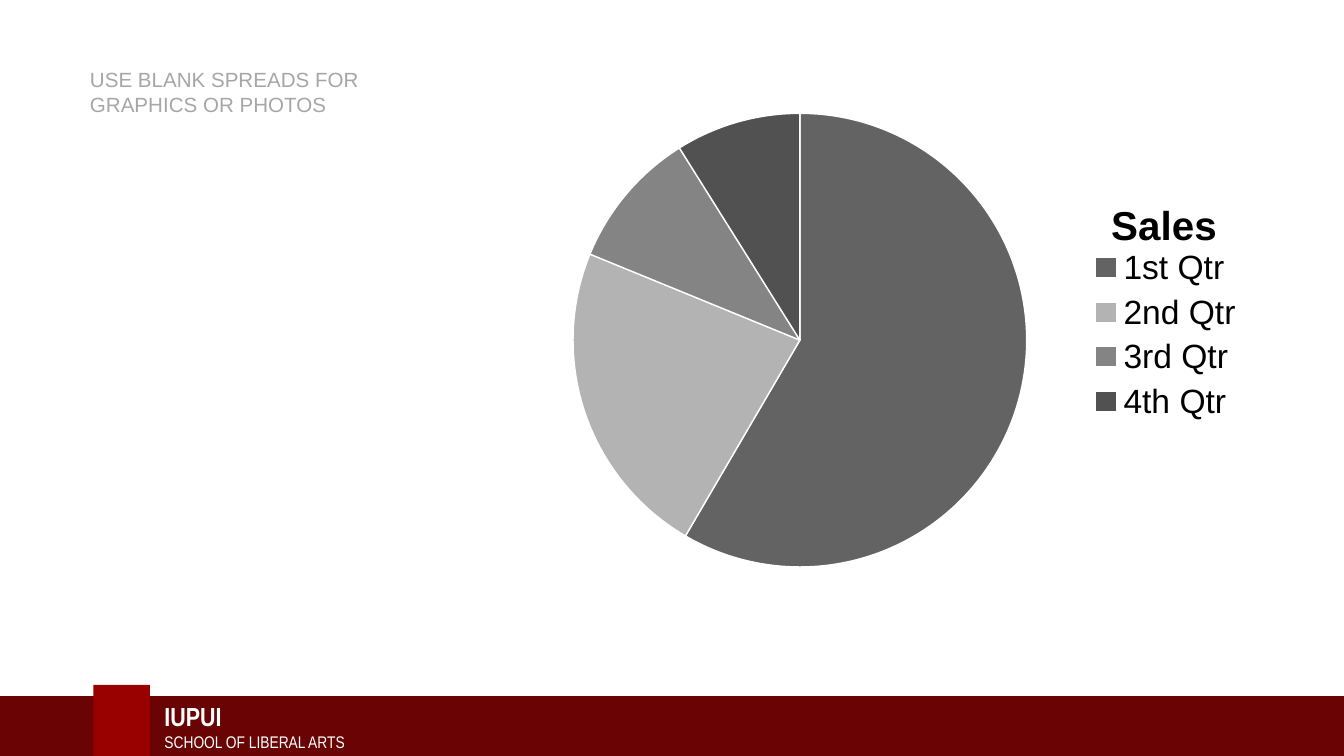
"""Build a slide with a quarterly sales pie chart above a school footer."""
from lxml import etree
from pptx import Presentation
from pptx.chart.data import CategoryChartData
from pptx.dml.color import RGBColor
from pptx.enum.chart import XL_CHART_TYPE, XL_LEGEND_POSITION
from pptx.enum.shapes import MSO_SHAPE
from pptx.enum.text import MSO_ANCHOR, PP_ALIGN
from pptx.oxml.ns import qn
from pptx.util import Pt

PIE = XL_CHART_TYPE.PIE
LEGEND_RIGHT = XL_LEGEND_POSITION.RIGHT
RECTANGLE = MSO_SHAPE.RECTANGLE
TOP, MIDDLE = MSO_ANCHOR.TOP, MSO_ANCHOR.MIDDLE
LEFT = PP_ALIGN.LEFT
TITLE_ONLY = 5

COLORS = {
    "band": "690304",
    "tab": "990000",
    "white": "FFFFFF",
    "black": "000000",
    "heading": "A6A6A6",
}
QUARTERS = [
    ("1st Qtr", 59, "636363"),
    ("2nd Qtr", 23, "B3B3B3"),
    ("3rd Qtr", 10, "848484"),
    ("4th Qtr", 9, "515151"),
]


def rgb(name):
    return RGBColor.from_string(COLORS[name])


def style_font(font, name, size, color, bold=False):
    font.name = name
    font.size = Pt(size)
    font.bold = bold
    font.color.rgb = rgb(color)


def add_block(slide, box, color):
    shape = slide.shapes.add_shape(RECTANGLE, *map(Pt, box))
    shape.shadow.inherit = False
    shape.fill.solid()
    shape.fill.fore_color.rgb = rgb(color)
    shape.line.fill.background()


def add_footer_text(slide, box, lines):
    frame = slide.shapes.add_textbox(*map(Pt, box)).text_frame
    frame.word_wrap = True
    frame.vertical_anchor = MIDDLE
    frame.text = "\n".join(text for text, _, _ in lines)
    for paragraph, (_, size, bold) in zip(frame.paragraphs, lines):
        style_font(paragraph.font, "Arial Narrow", size, "white", bold)


def set_heading(slide, box, text):
    title = slide.shapes.title
    title.left, title.top, title.width, title.height = map(Pt, box)
    frame = title.text_frame
    frame.text = text
    frame.word_wrap = True
    frame.vertical_anchor = TOP
    paragraph = frame.paragraphs[0]
    paragraph.alignment = LEFT
    style_font(paragraph.font, "Arial", 11, "heading")


def make_layout(**settings):
    layout = etree.Element(qn("c:layout"))
    manual = etree.SubElement(layout, qn("c:manualLayout"))
    for tag, value in settings.items():
        etree.SubElement(manual, qn(f"c:{tag}")).set("val", str(value))
    return layout


def place_part(part, layout, following):
    for old in part.findall(qn("c:layout")):
        part.remove(old)
    part.find(qn(following)).addprevious(layout)


def add_sales_chart(slide, box):
    data = CategoryChartData()
    data.categories = [quarter for quarter, _, _ in QUARTERS]
    data.add_series("Sales", [value for _, value, _ in QUARTERS])
    chart = slide.shapes.add_chart(PIE, *map(Pt, box), data).chart
    style_font(chart.font, "Arial", 18, "black")

    chart.has_title = True
    frame = chart.chart_title.text_frame
    frame.text = "Sales"
    style_font(frame.paragraphs[0].font, "Arial", 21.6, "black", True)
    chart.has_legend = True
    chart.legend.position = LEGEND_RIGHT
    chart.legend.include_in_layout = False

    plot = chart.plots[0]
    plot.vary_by_categories = True
    for index, (_, _, color) in enumerate(QUARTERS):
        style = plot.series[0].points[index].format
        style.fill.solid()
        style.fill.fore_color.rgb = RGBColor.from_string(color)
        style.line.color.rgb = rgb("white")
        style.line.width = Pt(0.75)

    chart_xml = chart.element.find(qn("c:chart"))
    title_layout = make_layout(xMode="edge", yMode="edge", x=0.82, y=0.25)
    place_part(chart_xml.find(qn("c:title")), title_layout, "c:overlay")
    plot_layout = make_layout(
        layoutTarget="inner", xMode="edge", yMode="edge",
        x=0.2, y=0.11, w=0.53, h=0.8)
    place_part(chart_xml.find(qn("c:plotArea")), plot_layout, "c:pieChart")


def main():
    presentation = Presentation()
    presentation.slide_width, presentation.slide_height = Pt(720), Pt(405)
    slide = presentation.slides.add_slide(presentation.slide_layouts[TITLE_ONLY])
    add_block(slide, (-2, 373, 726, 36), "band")
    add_block(slide, (50, 367, 30.4, 42), "tab")
    add_footer_text(slide, (81, 371, 284, 36), [
        ("IUPUI", 14, True),
        ("SCHOOL OF LIBERAL ARTS", 9, False),
    ])
    set_heading(slide, (41, 32.4, 200, 34), "USE BLANK SPREADS FOR GRAPHICS OR PHOTOS")
    add_sales_chart(slide, (215.3, 26.6, 458.6, 305.3))
    presentation.save("out.pptx")


if __name__ == "__main__":
    main()
